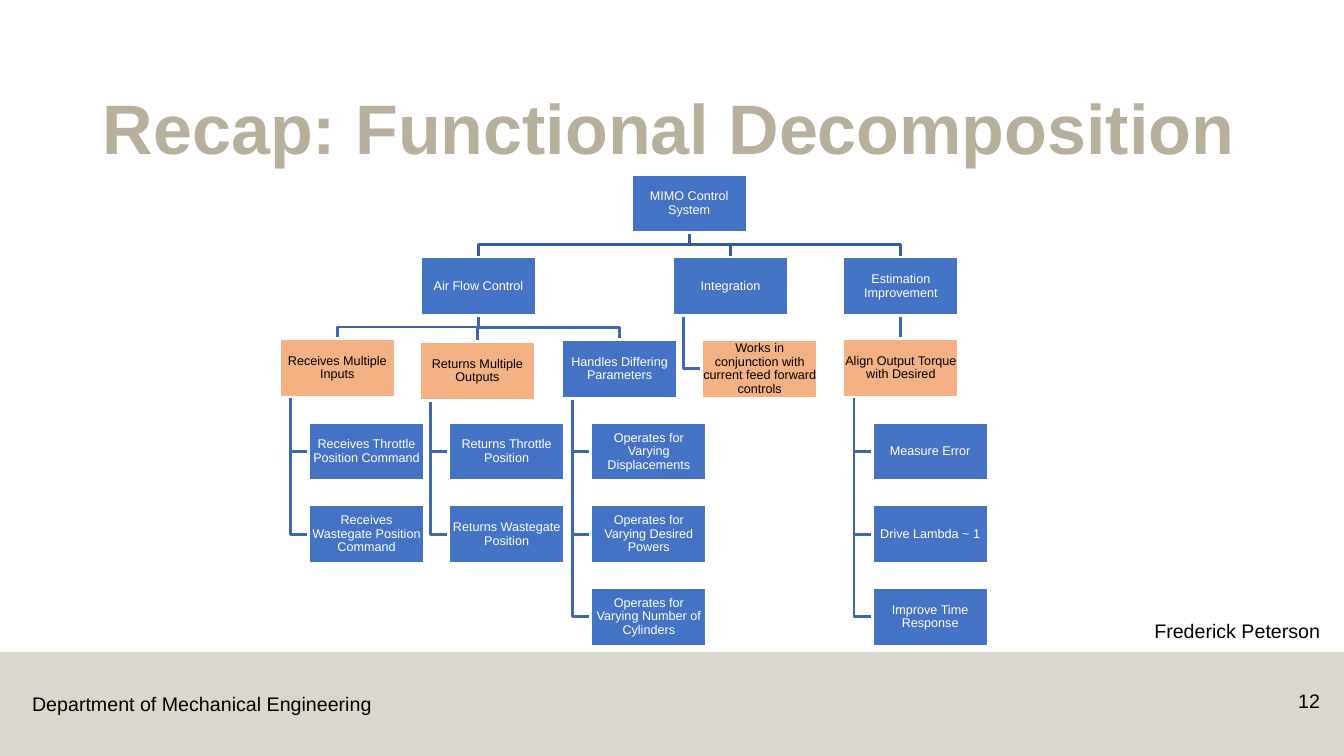
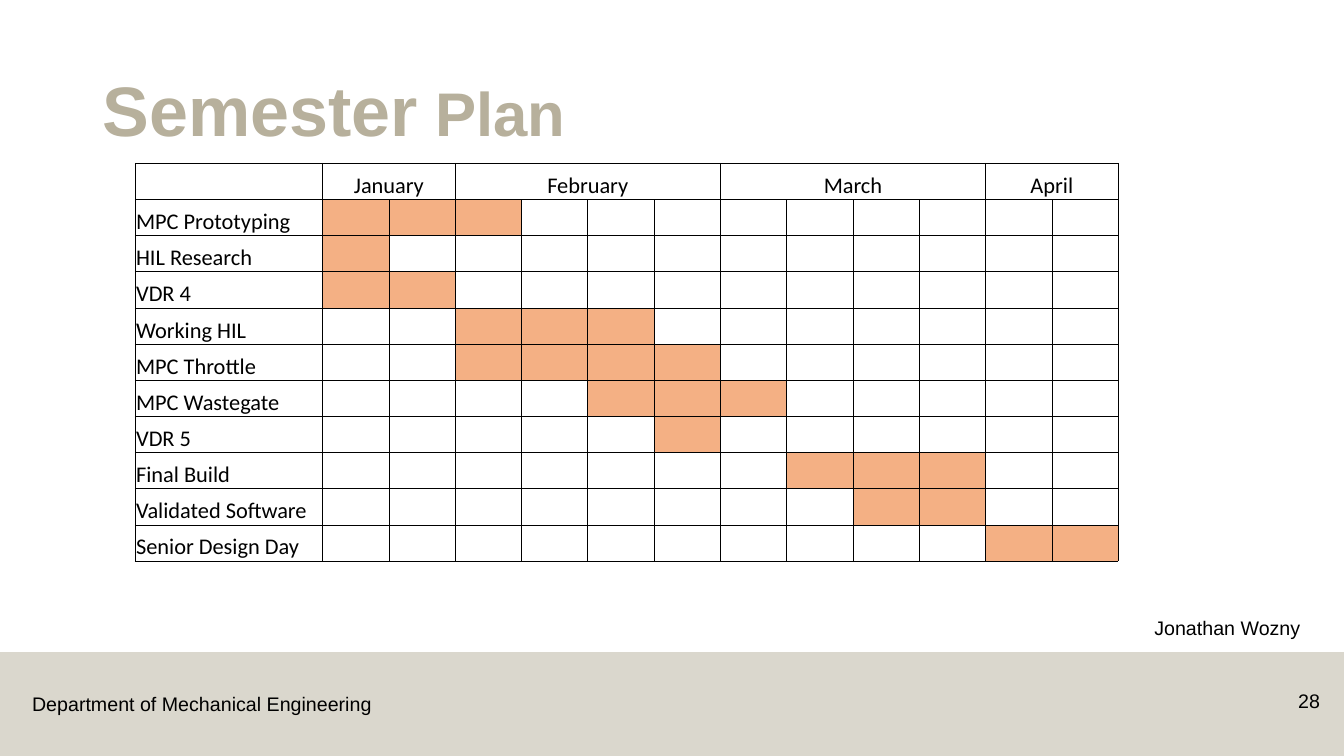
from lxml import etree
from pptx import Presentation
from pptx.dml.color import RGBColor
from pptx.enum.shapes import MSO_CONNECTOR, MSO_SHAPE
from pptx.enum.text import MSO_ANCHOR, PP_ALIGN
from pptx.oxml.ns import qn
from pptx.util import Inches, Pt

STRAIGHT = MSO_CONNECTOR.STRAIGHT
RECTANGLE = MSO_SHAPE.RECTANGLE
TOP, MIDDLE, BOTTOM = MSO_ANCHOR.TOP, MSO_ANCHOR.MIDDLE, MSO_ANCHOR.BOTTOM
LEFT, CENTER, RIGHT = PP_ALIGN.LEFT, PP_ALIGN.CENTER, PP_ALIGN.RIGHT

BLACK = RGBColor(0x00, 0x00, 0x00)
WHITE = RGBColor(0xFF, 0xFF, 0xFF)
SAND = RGBColor(0xB7, 0xB0, 0x9C)
BLUE = RGBColor(0x44, 0x72, 0xC4)
ORANGE = RGBColor(0xF4, 0xB1, 0x83)
GANTT_ORANGE = RGBColor(0xF4, 0xB0, 0x84)
TOP_LINE = RGBColor(0x36, 0x5B, 0x9D)
LOWER_LINE = RGBColor(0x3E, 0x67, 0xB2)

SLIDE_WIDTH, SLIDE_HEIGHT = 13.33, 7.5
DEPARTMENT = "Department of Mechanical Engineering"

BOX_WIDTH, BOX_HEIGHT = 1.15, 0.58
HANG_INDENT, HANG_PITCH, STEM_OFFSET = 0.29, 0.82, 0.11
ROOT = "MIMO Control System"
BRANCHES = [
    (ROOT, None, 6.26, 1.73, BLUE),
    ("Air Flow Control", ROOT, 4.17, 2.55, BLUE),
    ("Integration", ROOT, 6.67, 2.55, BLUE),
    ("Estimation Improvement", ROOT, 8.36, 2.55, BLUE),
    ("Receives Multiple Inputs", "Air Flow Control", 2.77, 3.36, ORANGE),
    ("Returns Multiple Outputs", "Air Flow Control", 4.16, 3.39, ORANGE),
    ("Handles Differing Parameters", "Air Flow Control", 5.57, 3.37, BLUE),
    ("Align Output Torque with Desired", "Estimation Improvement", 8.36, 3.36, ORANGE),
]
HANGING = [
    ("Integration", 3.37, ORANGE, ["Works in conjunction with current feed forward controls"]),
    ("Receives Multiple Inputs", 4.19, BLUE,
     ["Receives Throttle Position Command", "Receives Wastegate Position Command"]),
    ("Returns Multiple Outputs", 4.19, BLUE,
     ["Returns Throttle Position", "Returns Wastegate Position"]),
    ("Handles Differing Parameters", 4.19, BLUE,
     ["Operates for Varying Displacements", "Operates for Varying Desired Powers",
      "Operates for Varying Number of Cylinders"]),
    ("Align Output Torque with Desired", 4.19, BLUE,
     ["Measure Error", "Drive Lambda ~ 1", "Improve Time Response"]),
]

MONTHS = [("January", 2), ("February", 4), ("March", 4), ("April", 2)]
TASKS = [
    ("MPC Prototyping", 1, 3),
    ("HIL Research", 1, 1),
    ("VDR 4", 1, 2),
    ("Working HIL", 3, 5),
    ("MPC Throttle", 3, 6),
    ("MPC Wastegate", 5, 7),
    ("VDR 5", 6, 6),
    ("Final Build", 8, 10),
    ("Validated Software", 9, 10),
    ("Senior Design Day", 11, 12),
]
TASK_WIDTH, WEEK_WIDTH, ROW_HEIGHT = 1.86, 0.6575, 0.359
CELL_FORMAT = {"margin_left": Inches(0.01), "margin_right": Inches(0.01),
               "margin_top": Inches(0.01), "margin_bottom": 0,
               "vertical_anchor": BOTTOM}
BOX_FORMAT = {"margin_left": Inches(0.01), "margin_right": Inches(0.01),
              "margin_top": Inches(0.01), "margin_bottom": Inches(0.01),
              "vertical_anchor": MIDDLE, "word_wrap": True}


def set_values(target, values):
    for name, value in values.items():
        setattr(target, name, value)


def write(paragraph, runs, color, font="Arial", bold=False, align=LEFT, spacing=1.0):
    set_values(paragraph, {"alignment": align, "line_spacing": spacing})
    for text, size in runs:
        run = paragraph.add_run()
        run.text = text
        set_values(run.font, {"name": font, "size": Pt(size), "bold": bold})
        run.font.color.rgb = color


def add_text(slide, place, runs, color=BLACK, anchor=TOP, **style):
    text_box = slide.shapes.add_textbox(*map(Inches, place))
    set_values(text_box.text_frame, {"word_wrap": True, "vertical_anchor": anchor})
    write(text_box.text_frame.paragraphs[0], runs, color, **style)


def add_rectangle(slide, place, fill):
    shape = slide.shapes.add_shape(RECTANGLE, *map(Inches, place))
    shape.shadow.inherit = False
    shape.fill.solid()
    shape.fill.fore_color.rgb = fill
    return shape


def add_base(presentation, number, title, title_place, title_anchor, presenter, presenter_top):
    slide = presentation.slides.add_slide(presentation.slide_layouts[6])
    band = add_rectangle(slide, (0, 6.47, SLIDE_WIDTH, 1.03), SAND)
    band.line.fill.background()
    band_color = band._element.spPr.find(qn("a:solidFill"))[0]
    etree.SubElement(band_color, qn("a:alpha"), val="50000")
    add_text(slide, (0.22, 6.82, 3.7, 0.34), [(DEPARTMENT, 14)])
    add_text(slide, (12.42, 6.79, 0.77, 0.4), [(number, 14)], align=RIGHT)
    add_text(slide, title_place, title, SAND, title_anchor, bold=True, spacing=0.9)
    add_text(slide, (11.35, presenter_top, 1.95, 0.34), [(presenter, 14)])
    return slide


def add_path(slide, points, color):
    points = [(Inches(x), Inches(y)) for x, y in points]
    if len({x for x, _ in points}) == 1:
        line_shape = slide.shapes.add_connector(STRAIGHT, *points[0], *points[-1])
        etree.SubElement(line_shape._element.spPr, qn("a:effectLst"))
    else:
        builder = slide.shapes.build_freeform(*points[0], scale=1.0)
        builder.add_line_segments(points[1:], close=False)
        line_shape = builder.convert_to_shape()
        line_shape.fill.background()
        line_shape.shadow.inherit = False
    line_shape.line.color.rgb = color
    line_shape.line.width = Pt(2)


def add_box(slide, label, left, top, fill):
    box = add_rectangle(slide, (left, top, BOX_WIDTH, BOX_HEIGHT), fill)
    box.line.color.rgb = WHITE
    box.line.width = Pt(2)
    set_values(box.text_frame, BOX_FORMAT)
    write(box.text_frame.paragraphs[0], [(label, 9)],
          WHITE if fill == BLUE else BLACK, align=CENTER, spacing=0.9)


def add_decomposition(slide):
    places = {label: (left, top) for label, _, left, top, _ in BRANCHES}
    boxes = [(label, left, top, fill) for label, _, left, top, fill in BRANCHES]
    for label, parent, left, top, _ in BRANCHES:
        if parent:
            parent_left, parent_top = places[parent]
            start_x, end_x = parent_left + BOX_WIDTH / 2, left + BOX_WIDTH / 2
            start_y = parent_top + BOX_HEIGHT
            middle_y = (start_y + top) / 2
            add_path(slide, [(start_x, start_y), (start_x, middle_y),
                             (end_x, middle_y), (end_x, top)],
                     TOP_LINE if parent == ROOT else LOWER_LINE)
    for parent, first_top, fill, labels in HANGING:
        parent_left, parent_top = places[parent]
        stem, left = parent_left + STEM_OFFSET, parent_left + HANG_INDENT
        for index, label in enumerate(labels):
            top = first_top + index * HANG_PITCH
            middle_y = top + BOX_HEIGHT / 2
            add_path(slide, [(stem, parent_top + BOX_HEIGHT), (stem, middle_y),
                             (left, middle_y)], LOWER_LINE)
            boxes.append((label, left, top, fill))
    for box in boxes:
        add_box(slide, *box)


def format_cell(cell, fill):
    set_values(cell, CELL_FORMAT)
    properties = cell._tc.get_or_add_tcPr()
    for side in ("a:lnL", "a:lnR", "a:lnT", "a:lnB"):
        border = etree.SubElement(properties, qn(side), w=str(Pt(0.5)))
        solid = etree.SubElement(border, qn("a:solidFill"))
        etree.SubElement(solid, qn("a:srgbClr"), val=str(BLACK))
    cell.fill.solid()
    cell.fill.fore_color.rgb = fill


def write_cell(cell, text, align):
    write(cell.text_frame.paragraphs[0], [(text, 16)], BLACK, font="Calibri", align=align)


def add_plan(slide):
    weeks = sum(count for _, count in MONTHS)
    rows = len(TASKS) + 1
    width = TASK_WIDTH + weeks * WEEK_WIDTH
    table = slide.shapes.add_table(rows, weeks + 1, Inches(1.34), Inches(1.62),
                                   Inches(width), Inches(rows * ROW_HEIGHT)).table
    set_values(table, {"first_row": False, "horz_banding": False})
    for index, column in enumerate(table.columns):
        column.width = Inches(WEEK_WIDTH if index else TASK_WIDTH)
    for row in table.rows:
        row.height = Inches(ROW_HEIGHT)
    spans = [(0, 0)] + [(start, end) for _, start, end in TASKS]
    for row, (start, end) in enumerate(spans):
        for column in range(weeks + 1):
            busy = row and start <= column <= end
            format_cell(table.cell(row, column), GANTT_ORANGE if busy else WHITE)
    first = 1
    for month, count in MONTHS:
        table.cell(0, first).merge(table.cell(0, first + count - 1))
        write_cell(table.cell(0, first), month, CENTER)
        first += count
    for row, (task, _, _) in enumerate(TASKS, 1):
        write_cell(table.cell(row, 0), task, LEFT)


def main():
    presentation = Presentation()
    presentation.slide_width = Inches(SLIDE_WIDTH)
    presentation.slide_height = Inches(SLIDE_HEIGHT)
    add_decomposition(add_base(
        presentation, "12", [("Recap: Functional Decomposition", 50)],
        (0.92, 0.63, 11.5, 1.1), BOTTOM, "Frederick Peterson", 6.09))
    add_plan(add_base(
        presentation, "28", [("Semester", 50), (" Plan", 44)],
        (0.92, 0.4, 11.5, 1.45), MIDDLE, "Jonathan Wozny", 6.06))
    presentation.save("out.pptx")


if __name__ == "__main__":
    main()
